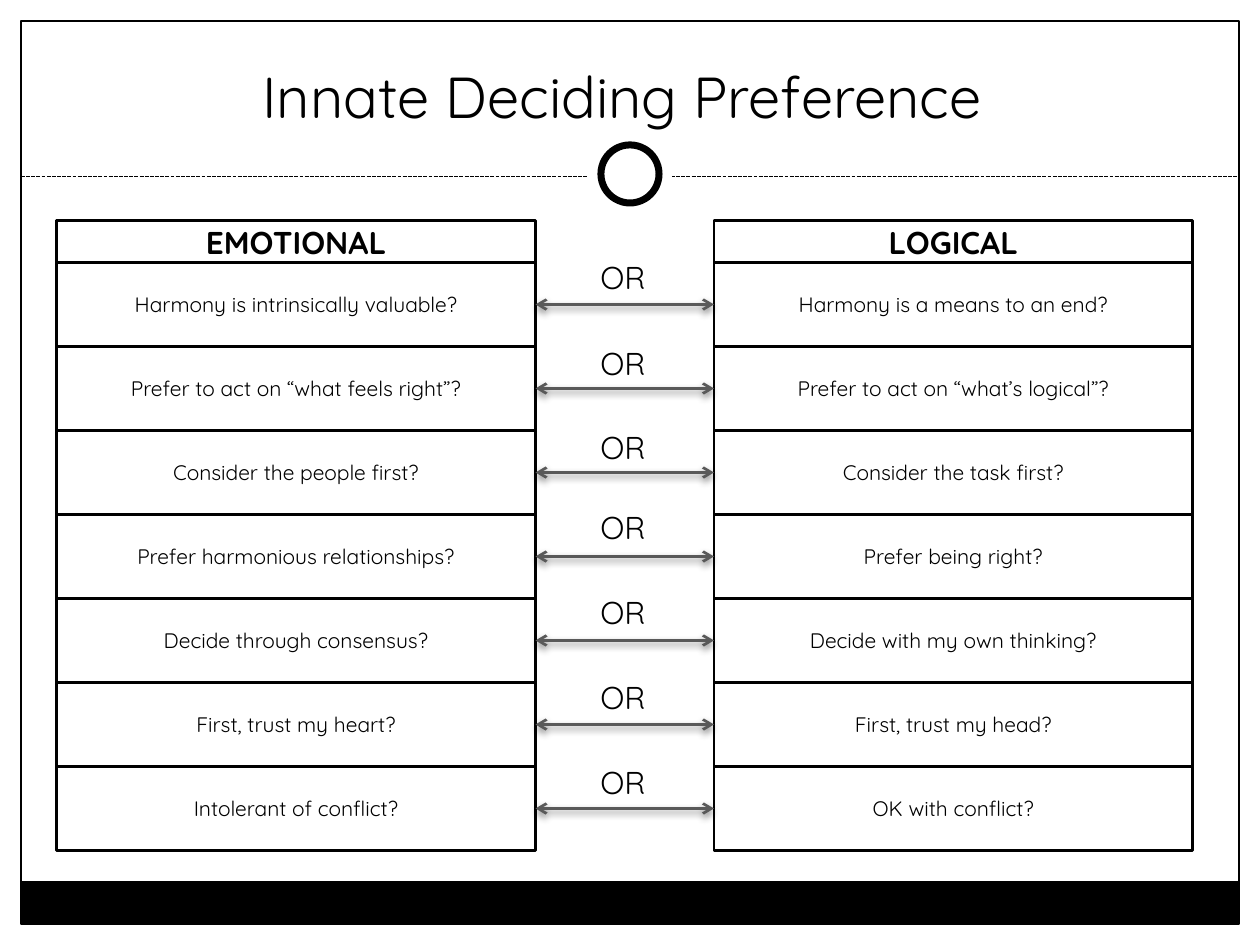
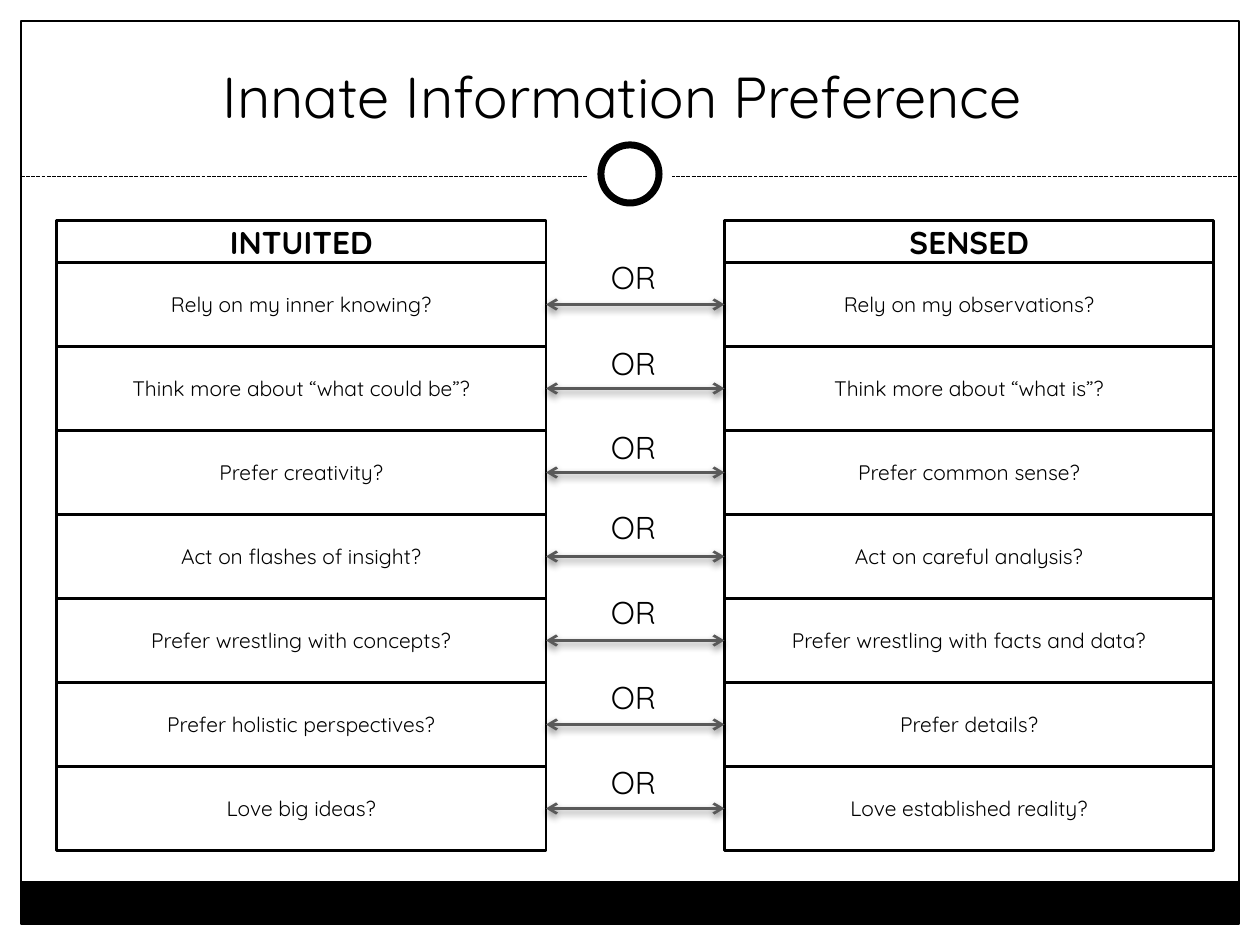
from lxml import etree
from pptx import Presentation
from pptx.dml.color import RGBColor
from pptx.enum import dml, shapes, text
from pptx.oxml.ns import qn
from pptx.util import Pt

HUES = {"ink": "000000", "paper": "FFFFFF", "arrow": "595959"}
FONT = "Quicksand"
RECT = shapes.MSO_SHAPE.RECTANGLE
OVAL = shapes.MSO_SHAPE.OVAL

# Grid, in points
LEFT, TOP = 32.4, 126
HEAD, ROW = 24, 48
OR_TOPS = [144, 193, 241, 286.5, 335.5, 384, 432.5]

DECIDE = [
    ("EMOTIONAL", "LOGICAL"),
    ("Harmony is intrinsically valuable?", "Harmony is a means to an end?"),
    ("Prefer to act on “what feels right”?", "Prefer to act on “what’s logical”?"),
    ("Consider the people first?", "Consider the task first?"),
    ("Prefer harmonious relationships?", "Prefer being right?"),
    ("Decide through consensus?", "Decide with my own thinking?"),
    ("First, trust my heart?", "First, trust my head?"),
    ("Intolerant of conflict?", "OK with conflict?"),
]
INFORM = [
    ("INTUITED", "SENSED"),
    ("Rely on my inner knowing?", "Rely on my observations?"),
    ("Think more about “what could be”?", "Think more about “what is”?"),
    ("Prefer creativity?", "Prefer common sense?"),
    ("Act on flashes of insight?", "Act on careful analysis?"),
    ("Prefer wrestling with concepts?", "Prefer wrestling with facts and data?"),
    ("Prefer holistic perspectives?", "Prefer details?"),
    ("Love big ideas?", "Love established reality?"),
]


def hue(name):
    return RGBColor.from_string(HUES[name])


def write(frame, words, size, bold=False, align=text.PP_ALIGN.CENTER):
    frame.text = words
    para = frame.paragraphs[0]
    para.alignment = align
    font = para.font
    font.name, font.size, font.bold = FONT, Pt(size), bold
    font.color.rgb = hue("ink")


def form(slide, kind, x, y, w, h, fill=None, line=None):
    shape = slide.shapes.add_shape(kind, Pt(x), Pt(y), Pt(w), Pt(h))
    shape.shadow.inherit = False
    if fill:
        shape.fill.solid()
        shape.fill.fore_color.rgb = hue(fill)
    else:
        shape.fill.background()
    if line:
        shape.line.color.rgb = hue("ink")
        shape.line.width = Pt(line)
    else:
        shape.line.fill.background()
    return shape


def rule(slide, x1, y1, x2, y2, color, width):
    """Straight line with an empty effect list, which is returned too."""
    link = slide.shapes.add_connector(
        shapes.MSO_CONNECTOR.STRAIGHT, Pt(x1), Pt(y1), Pt(x2), Pt(y2))
    link.line.color.rgb = hue(color)
    link.line.width = Pt(width)
    fx = etree.SubElement(link.element.spPr, qn("a:effectLst"))
    return link, fx


def arrow(slide, start, end):
    y = start.top.pt + start.height.pt / 2
    link, fx = rule(slide, start.left.pt + start.width.pt, y,
                    end.left.pt, y, "arrow", 1.57)
    link.begin_connect(start, 3)
    link.end_connect(end, 1)
    stroke = link.element.spPr.find(qn("a:ln"))
    for tip in ("a:headEnd", "a:tailEnd"):
        etree.SubElement(stroke, qn(tip), type="arrow")
    # Soft shadow straight below
    cast = etree.SubElement(fx, qn("a:outerShdw"), blurRad=str(Pt(4)),
                            dist=str(Pt(2)), dir="5400000", rotWithShape="0")
    tone = etree.SubElement(cast, qn("a:srgbClr"), val=HUES["ink"])
    etree.SubElement(tone, qn("a:alpha"), val="45000")


def box(slide, x, y, w, h, words, size, bold):
    shape = form(slide, RECT, x, y, w, h, line=1.5)
    shape.text_frame.word_wrap = True
    shape.text_frame.vertical_anchor = text.MSO_ANCHOR.MIDDLE
    write(shape.text_frame, words, size, bold)
    return shape


def label(slide, x, y):
    frame = slide.shapes.add_textbox(Pt(x), Pt(y), Pt(41), Pt(29)).text_frame
    frame.word_wrap = False
    frame.auto_size = text.MSO_AUTO_SIZE.SHAPE_TO_FIT_TEXT
    write(frame, "OR", 18, align=text.PP_ALIGN.LEFT)


def dress(slide):
    """Build the shared frame once and hand it to the slide's layout."""
    layout = slide.slide_layout
    dash, _ = rule(slide, 12, 100.8, 708, 100.8, "ink", 0.75)
    dash.line.dash_style = dml.MSO_LINE.SQUARE_DOT
    parts = [
        form(slide, RECT, 12, 503.5, 696, 24.5, fill="ink"),
        form(slide, RECT, 12, 12, 696, 516, line=0.75),
        dash,
        form(slide, OVAL, 336, 75.6, 48, 48, fill="paper"),
        form(slide, OVAL, 343.4, 82.8, 33.2, 33.2, fill="paper", line=4),
    ]
    for num, part in enumerate(parts, 20):
        part.element.xpath(".//p:cNvPr")[0].set("id", str(num))
        layout.shapes.element.append(part.element)
    # Title place
    title = layout.placeholders[0]
    title.left, title.top, title.width, title.height = (
        Pt(24), Pt(18), Pt(672), Pt(60))
    title.text_frame.vertical_anchor = text.MSO_ANCHOR.BOTTOM
    title.text_frame.auto_size = text.MSO_AUTO_SIZE.NONE


def compare(slide, title, rows, wide, right):
    write(slide.shapes.title.text_frame, title, 33)
    y, pairs = TOP, []
    for num, words in enumerate(rows):
        top = num == 0
        high, size = (HEAD, 18) if top else (ROW, 12)
        pairs.append([box(slide, x, y, wide, high, word, size, top)
                      for x, word in zip((LEFT, right), words)])
        y += high
    # Links between the answers
    for (one, two), y in zip(pairs[1:], OR_TOPS):
        arrow(slide, one, two)
        label(slide, LEFT + wide + 30, y)


def main():
    deck = Presentation()
    deck.slide_width, deck.slide_height = Pt(720), Pt(540)
    layout = deck.slide_layouts[5]
    first, second = [deck.slides.add_slide(layout) for _ in range(2)]
    dress(first)
    compare(first, "Innate Deciding Preference ", DECIDE, 273.6, 408)
    compare(second, "Innate Information Preference ", INFORM, 279.6, 414)
    deck.save("out.pptx")


if __name__ == "__main__":
    main()
